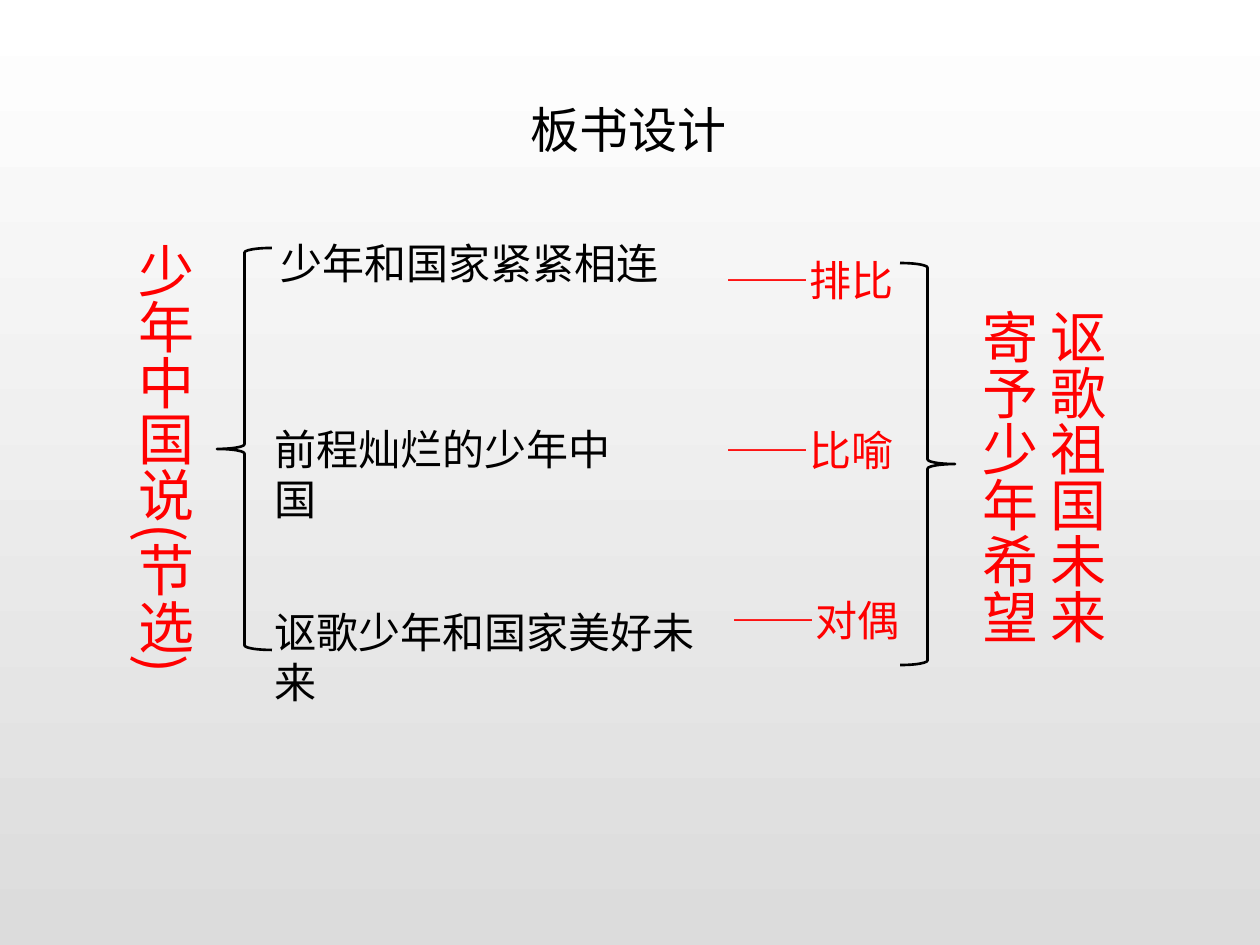
from lxml.etree import SubElement
from pptx import Presentation
from pptx.dml.color import RGBColor
from pptx.enum.shapes import MSO_SHAPE as Shape
from pptx.enum.text import MSO_AUTO_SIZE as AutoSize
from pptx.oxml.ns import qn
from pptx.util import Emu, Pt

PX = 914400 / 126
BLACK, RED = "000000", "FF0000"


def px(n):
    return Emu(round(n * PX))


def rgb(value):
    return RGBColor.from_string(value)


class Board:
    """Blackboard-plan slide with one font and a method per kind of element."""

    font = "Noto Sans CJK SC"

    def __init__(self, prs):
        self.s = prs.slides.add_slide(prs.slide_layouts[6])

    def background(self, *colors):
        fill = self.s.background.fill
        fill.gradient()
        fill.gradient_angle = 270
        for stop, color in zip(fill.gradient_stops, colors):
            stop.color.rgb = rgb(color)

    def text(self, box, lines, size, color, wrap=False, vertical=False):
        sp = self.s.shapes.add_textbox(*map(px, box))
        tf = sp.text_frame
        for name, value in {"word_wrap": wrap, "auto_size": AutoSize.SHAPE_TO_FIT_TEXT}.items():
            setattr(tf, name, value)
        if vertical:
            tf._txBody.find(qn("a:bodyPr")).set("vert", "eaVert")
        for i, line in enumerate(lines):
            p = tf.add_paragraph() if i else tf.paragraphs[0]
            r = p.add_run()
            r.text = line
            for name, value in {"size": Pt(size), "name": self.font}.items():
                setattr(r.font, name, value)
            r.font.color.rgb = rgb(color)
            SubElement(r._r.get_or_add_rPr(), qn("a:ea")).set("typeface", self.font)

    def brace(self, left, top, rotation=0):
        sp = self.s.shapes.add_shape(Shape.LEFT_BRACE, *map(px, (left, top, 55, 402)))
        sp.rotation = rotation
        sp.shadow.inherit = False
        sp.fill.background()
        sp.line.color.rgb = rgb(BLACK)
        sp.line.width = Pt(1.5)


def main():
    prs = Presentation()
    prs.slide_width, prs.slide_height = px(1260), px(945)
    board = Board(prs)
    board.background("FFFFFF", "DCDCDC")

    board.text((518, 93, 223, 72), ["板书设计"], 28, BLACK)
    board.text((111, 231, 93, 465), ["少年中国说(节选)"], 32, RED, vertical=True)
    board.brace(217, 248)

    ideas = [
        ((268, 231, 538, 63), "少年和国家紧紧相连"),
        ((262, 417, 399, 115), "前程灿烂的少年中国"),
        ((262, 600, 483, 115), "讴歌少年和国家美好未来"),
    ]
    for box, idea in ideas:
        board.text(box, [idea], 24, BLACK, wrap=True)

    devices = [(713, "排比"), (713, "比喻"), (719, "对偶")]
    for i, (left, device) in enumerate(devices):
        board.text((left, 248 + 170 * i, 195, 63), ["——" + device], 24, RED)

    board.brace(900, 263, rotation=180)
    board.text((955, 297, 161, 352), ["讴歌祖国未来", "寄予少年希望"], 32, RED, vertical=True)
    prs.save("out.pptx")


if __name__ == "__main__":
    main()
